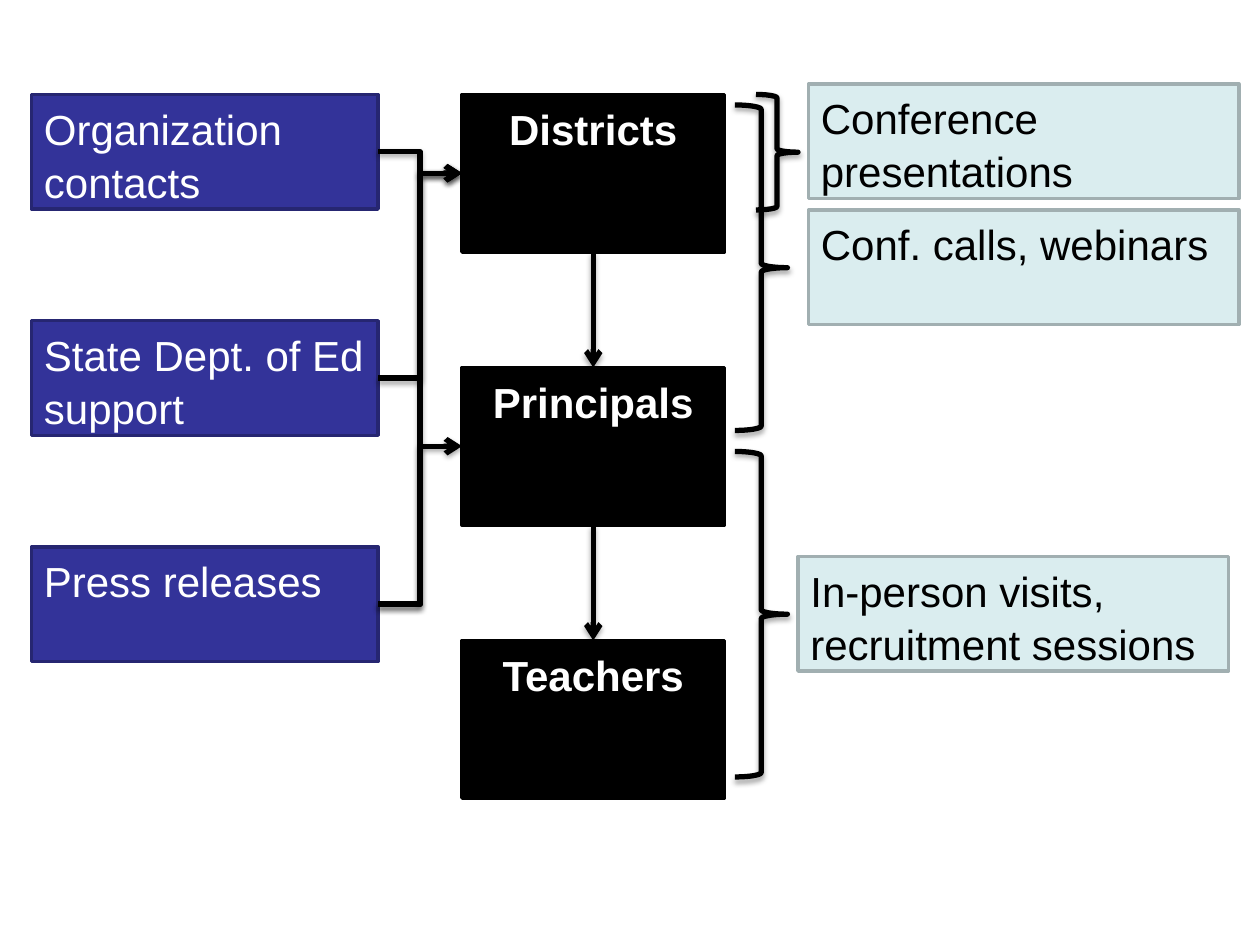
from lxml import etree
from pptx import Presentation
from pptx.dml.color import RGBColor
from pptx.enum import shapes, text
from pptx.oxml import parse_xml
from pptx.oxml.ns import nsdecls, qn
from pptx.util import Pt

BLACK, WHITE = "000000", "FFFFFF"
BOX_HEIGHT = 65.5
CONTACTS = ["Organization contacts", "State Dept. of Ed support", "Press releases"]
LEVELS = ["Districts", "Principals", "Teachers"]
OUTREACH = [
    ("Conference presentations", 462, 48),
    ("Conf. calls, webinars", 462, 120),
    ("In-person visits, recruitment sessions", 456, 318),
]
BRACES = [(432, 54, 24, 66), (420, 60, 30, 186), (420, 258, 30, 186)]


def color(hex_string):
    return RGBColor.from_string(hex_string)


def add_box(slide, label, bounds, fill, border, ink, centered=False):
    box = slide.shapes.add_shape(shapes.MSO_SHAPE.RECTANGLE, *map(Pt, bounds))
    box.shadow.inherit = False
    box.fill.solid()
    box.fill.fore_color.rgb = color(fill)
    box.line.color.rgb = color(border)
    box.line.width = Pt(2)
    frame = box.text_frame
    frame.word_wrap = True
    frame.vertical_anchor = text.MSO_ANCHOR.TOP
    paragraph = frame.paragraphs[0]
    paragraph.text = label
    paragraph.alignment = text.PP_ALIGN.CENTER if centered else text.PP_ALIGN.LEFT
    paragraph.line_spacing = 1.05
    font = paragraph.font
    font.name, font.size, font.bold = "Arial", Pt(24), centered
    font.color.rgb = color(ink)
    return box


def style_stroke(stroke):
    """Give a brace or connector its thick black line and soft drop shadow."""
    stroke.line.color.rgb = color(BLACK)
    stroke.line.width = Pt(3)
    stroke._element.spPr.append(parse_xml(
        f'<a:effectLst {nsdecls("a")}>'
        f'<a:outerShdw blurRad="{Pt(3.1)}" dist="{Pt(1.8)}" dir="5400000" rotWithShape="0">'
        f'<a:srgbClr val="{BLACK}"><a:alpha val="35000"/></a:srgbClr>'
        '</a:outerShdw></a:effectLst>'))


def add_arrow(slide, kind, source, source_side, target, target_side):
    arrow = slide.shapes.add_connector(kind, 0, 0, 0, 0)
    arrow.begin_connect(source, source_side)
    arrow.end_connect(target, target_side)
    style_stroke(arrow)
    etree.SubElement(arrow.line._get_or_add_ln(), qn("a:tailEnd"), type="arrow")


def add_brace(slide, bounds):
    brace = slide.shapes.add_shape(shapes.MSO_SHAPE.RIGHT_BRACE, *map(Pt, bounds))
    brace.fill.background()
    style_stroke(brace)


def main():
    deck = Presentation()
    deck.slide_width, deck.slide_height = Pt(720), Pt(540)
    slide = deck.slides.add_slide(deck.slide_layouts[6])

    contacts = [
        add_box(slide, label, (18, 54 + 129.25 * row, 198, BOX_HEIGHT),
                "333399", "262671", WHITE)
        for row, label in enumerate(CONTACTS)
    ]
    levels = [
        add_box(slide, label, (264, 54 + 156 * row, 150, 90),
                BLACK, BLACK, WHITE, centered=True)
        for row, label in enumerate(LEVELS)
    ]
    for label, left, top in OUTREACH:
        add_box(slide, label, (left, top, 246, BOX_HEIGHT), "DAEDEF", "A1AFB1", BLACK)

    districts, principals, _ = levels
    press = contacts[-1]
    for source, target in [(box, districts) for box in contacts] + [(press, principals)]:
        add_arrow(slide, shapes.MSO_CONNECTOR.ELBOW, source, 3, target, 1)
    for bounds in BRACES:
        add_brace(slide, bounds)
    for upper, lower in zip(levels, levels[1:]):
        add_arrow(slide, shapes.MSO_CONNECTOR.STRAIGHT, upper, 2, lower, 0)

    deck.save("out.pptx")


if __name__ == "__main__":
    main()
